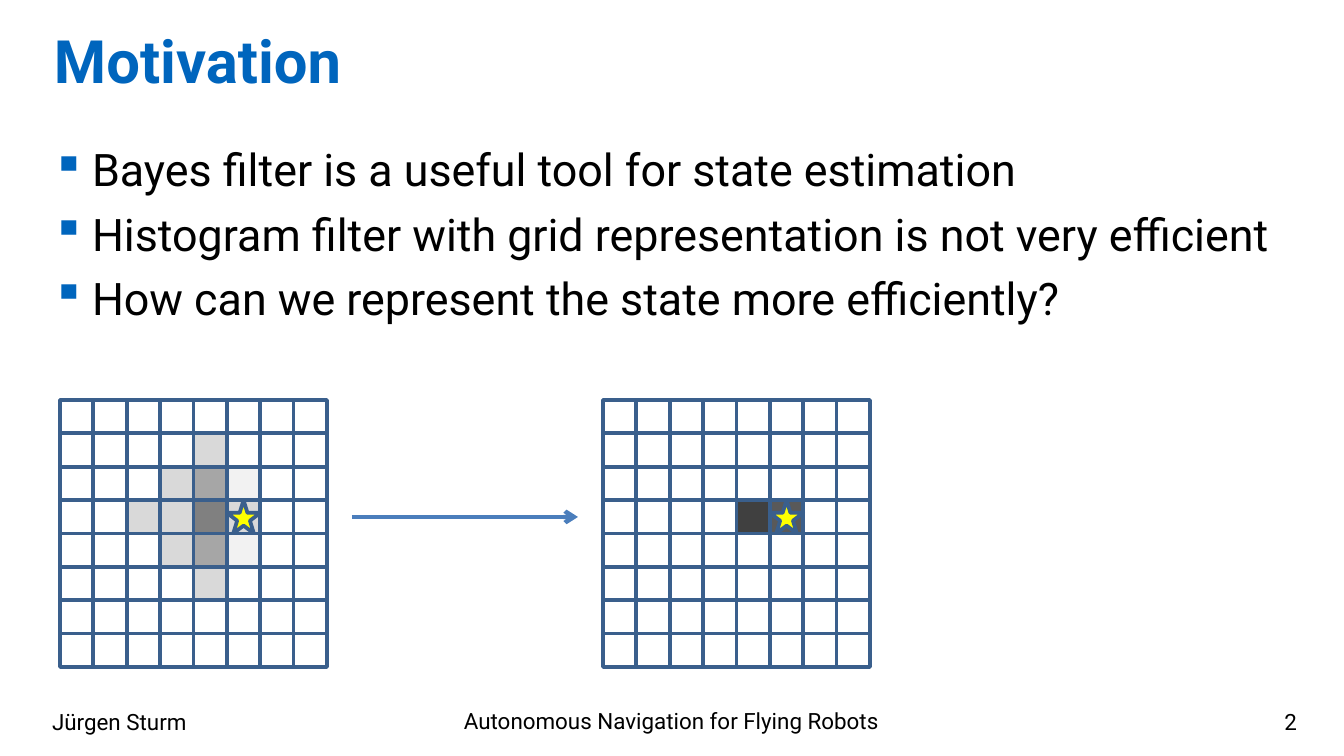
"""Build the Motivation slide comparing a coarse and a peaked grid belief."""
from dataclasses import dataclass

from lxml import etree
from pptx import Presentation
from pptx.dml.color import RGBColor
from pptx.enum.shapes import MSO_CONNECTOR, MSO_SHAPE
from pptx.enum.text import MSO_ANCHOR, PP_ALIGN
from pptx.oxml.ns import qn
from pptx.shapes.autoshape import Shape
from pptx.slide import Slide
from pptx.util import Pt

LEFT, CENTER, RIGHT = PP_ALIGN.LEFT, PP_ALIGN.CENTER, PP_ALIGN.RIGHT
TOP, MIDDLE = MSO_ANCHOR.TOP, MSO_ANCHOR.MIDDLE
SQUARE, STAR = MSO_SHAPE.RECTANGLE, MSO_SHAPE.STAR_5_POINT
STRAIGHT = MSO_CONNECTOR.STRAIGHT

BLUE = RGBColor(0x00, 0x65, 0xBD)
BLACK = RGBColor(0x00, 0x00, 0x00)
YELLOW = RGBColor(0xFF, 0xFF, 0x00)
GRID_LINE = RGBColor(0x3A, 0x5F, 0x8C)
ARROW_LINE = RGBColor(0x4B, 0x7E, 0xBC)
SHADES = {
    "W": RGBColor(0xFF, 0xFF, 0xFF),
    "1": RGBColor(0xF2, 0xF2, 0xF2),
    "2": RGBColor(0xD9, 0xD9, 0xD9),
    "3": RGBColor(0xA6, 0xA6, 0xA6),
    "4": RGBColor(0x80, 0x80, 0x80),
    "5": RGBColor(0x59, 0x59, 0x59),
    "6": RGBColor(0x40, 0x40, 0x40),
}

FONT = "Roboto"
PX_PER_INCH = 134.4
GRID_TOP, GRID_SIDE, CELLS = 400, 267, 8
STAR_COLUMN, STAR_ROW = 5, 3
BULLET_INDENT = 40


@dataclass(frozen=True)
class Label:
    lines: tuple[str, ...]
    left: int
    top: int
    width: int
    height: int
    size: int = 12
    color: RGBColor = BLACK
    bold: bool = False
    align: PP_ALIGN = LEFT
    anchor: MSO_ANCHOR = MIDDLE
    bulleted: bool = False


@dataclass(frozen=True)
class Belief:
    left: int
    rows: tuple[str, ...]


LABELS = (
    Label(("Motivation",), 54, 24, 1124, 74, 32, BLUE, True, anchor=TOP),
    Label(
        (
            "Bayes filter is a useful tool for state estimation",
            "Histogram filter with grid representation is not very efficient",
            "How can we represent the state more efficiently?",
        ),
        52, 142, 1245, 532, 24, anchor=TOP, bulleted=True,
    ),
    Label(("Jürgen Sturm",), 52, 704, 313, 35),
    Label(("Autonomous Navigation for Flying Robots",), 302, 703, 739, 35, align=CENTER),
    Label(("2",), 964, 704, 333, 35, align=RIGHT),
)

BELIEFS = (
    Belief(603, ("........", "....W...", "...WWW..", "..WW65..",
                 "...WWW..", "....W...", "........", "........")),
    Belief(60, ("........", "....2...", "...231..", "..2242..",
                "...231..", "....2...", "........", "........")),
)


def px(length: float) -> int:
    """Convert pixels to EMU."""
    return round(length * 914400 / PX_PER_INCH)


def add_label(page: Slide, label: Label) -> None:
    """Draw a text box with one paragraph per line."""
    box = page.shapes.add_textbox(px(label.left), px(label.top), px(label.width), px(label.height))
    frame = box.text_frame
    frame.word_wrap = True
    frame.vertical_anchor = label.anchor
    frame.margin_left = frame.margin_top = frame.margin_right = frame.margin_bottom = 0
    for index, line in enumerate(label.lines):
        para = frame.add_paragraph() if index else frame.paragraphs[0]
        para.text = line
        para.alignment = label.align
        if index:
            para.space_before = Pt(5.6)
        if label.bulleted:
            properties = para._p.get_or_add_pPr()
            properties.set("marL", str(px(BULLET_INDENT)))
            properties.set("indent", str(-px(BULLET_INDENT)))
            color = etree.SubElement(properties, qn("a:buClr"))
            etree.SubElement(color, qn("a:srgbClr"), val=str(BLUE))
            etree.SubElement(properties, qn("a:buChar"), char="▪")
        para.font.name = FONT
        para.font.size = Pt(label.size)
        para.font.bold = label.bold
        para.font.color.rgb = label.color


def style_shape(shape: Shape, fill: RGBColor | None) -> None:
    """Give a grid shape its outline and optional fill."""
    shape.shadow.inherit = False
    if fill is None:
        shape.fill.background()
    else:
        shape.fill.solid()
        shape.fill.fore_color.rgb = fill
    shape.line.color.rgb = GRID_LINE
    shape.line.width = Pt(2)


def add_belief(page: Slide, belief: Belief) -> None:
    """Draw a shaded grid with a star on the true state."""
    group = page.shapes.add_group_shape()
    cell = GRID_SIDE / CELLS

    def add_cell(preset: MSO_SHAPE, column: int, row: int, fill: RGBColor | None) -> None:
        """Draw one shape that fills a grid cell."""
        left, top = belief.left + column * cell, GRID_TOP + row * cell
        style_shape(group.shapes.add_shape(preset, px(left), px(top), px(cell), px(cell)), fill)

    for row, codes in enumerate(belief.rows):
        for column, code in enumerate(codes):
            add_cell(SQUARE, column, row, SHADES.get(code))
    add_cell(STAR, STAR_COLUMN, STAR_ROW, YELLOW)


def add_arrow(page: Slide, start: int, end: int, height: int) -> None:
    """Draw a horizontal arrow between the grids."""
    arrow = page.shapes.add_connector(STRAIGHT, px(start), px(height), px(end), px(height))
    arrow.line.color.rgb = ARROW_LINE
    arrow.line.width = Pt(2.25)
    etree.SubElement(arrow.line._get_or_add_ln(), qn("a:tailEnd"), type="arrow")
    etree.SubElement(arrow._element.spPr, qn("a:effectLst"))


def main() -> None:
    """Assemble and save the deck."""
    deck = Presentation()
    deck.slide_width, deck.slide_height = px(1344), px(756)
    page = deck.slides.add_slide(deck.slide_layouts[6])
    for label in LABELS:
        add_label(page, label)
    for belief in BELIEFS:
        add_belief(page, belief)
    add_arrow(page, 352, 578, 517)
    deck.save("out.pptx")


if __name__ == "__main__":
    main()
